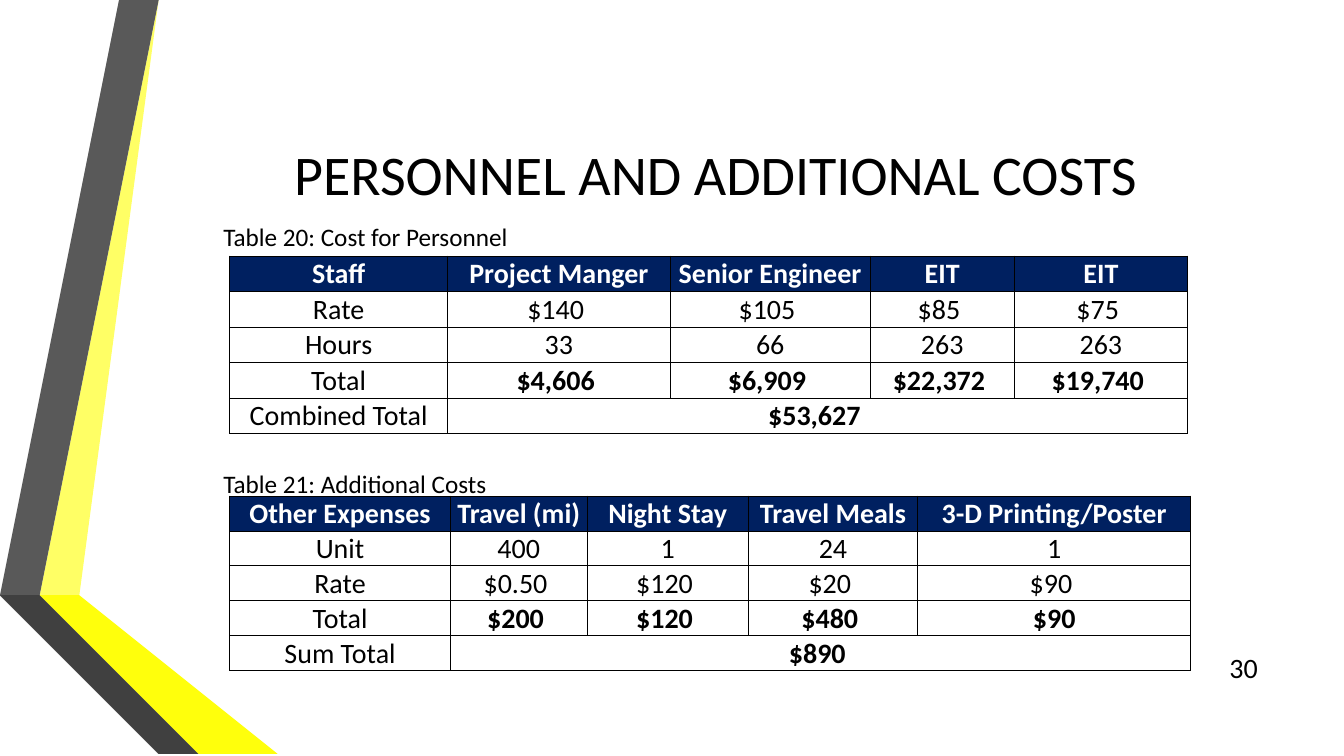
from dataclasses import dataclass

from lxml.etree import SubElement
from pptx import Presentation
from pptx.dml.color import RGBColor
from pptx.enum.text import MSO_ANCHOR, PP_ALIGN
from pptx.oxml.ns import qn
from pptx.util import Cm, Pt

# Content
TITLE = "PERSONNEL AND ADDITIONAL COSTS"
SLIDE_NUMBER = "30"

# The last row of each table holds a label and one value across the other columns
COST_TABLES = [
    {
        "caption": "Table 20: Cost for Personnel",
        "caption_top": 5.44,
        "top": 6.45,
        "column_widths": [5.49, 5.61, 5.04, 3.63, 4.37],
        "rows": [
            ["Staff", "Project Manger", "Senior Engineer", "EIT", "EIT"],
            ["Rate", "$140 ", "$105 ", "$85 ", "$75 "],
            ["Hours", "33", "66", "263", "263"],
            ["Total", "$4,606 ", "$6,909 ", "$22,372 ", "$19,740 "],
            ["Combined Total", "$53,627 "],
        ],
    },
    {
        "caption": "Table 21: Additional Costs",
        "caption_top": 11.68,
        "top": 12.5,
        "column_widths": [5.56, 3.45, 4.06, 4.27, 6.88],
        "rows": [
            ["Other Expenses", "Travel (mi)", "Night Stay", "Travel Meals", "3-D Printing/Poster"],
            ["Unit", "400", "1", "24", "1"],
            ["Rate", "$0.50 ", "$120 ", "$20 ", "$90 "],
            ["Total", "$200 ", "$120 ", "$480 ", "$90"],
            ["Sum Total", "$890 "],
        ],
    },
]

# Folded ribbons: theme colour and corner points in centimetres
RIBBONS = [
    ("yellow_light", [(1.27, 14.68), (1.96, 14.81), (4.39, 0), (3.68, 0)]),
    ("grey_light", [(3.53, 0), (2.82, 0), (0.41, 14.55), (1.12, 14.66)]),
    ("grey_edge", [(0.41, 14.55), (3.68, 19.05), (3.84, 19.05)]),
    ("yellow_edge", [(1.27, 14.71), (5.28, 19.05), (5.44, 19.05)]),
    ("yellow", [(1.27, 14.68), (1.27, 14.71), (5.44, 19.05), (7.19, 19.05), (1.96, 14.81)]),
    ("grey", [(5.12, 19.05), (1.22, 14.81), (1.09, 14.68), (1.12, 14.66),
              (0.41, 14.55), (3.84, 19.05)]),
]

TABLE_LEFT = 5.79
ROW_HEIGHT = 0.87
CAPTION_LEFT, CAPTION_WIDTH, LABEL_HEIGHT = 5.38, 14.88, 1.02


@dataclass(frozen=True)
class Theme:
    font: str = "Calibri"
    title_size: int = 40
    table_size: int = 20
    caption_size: int = 18
    border_width: float = 0.5
    text: str = "000000"
    header_text: str = "FFFFFF"
    header_fill: str = "002060"
    yellow_light: str = "FFFF65"
    yellow: str = "FFFF0C"
    yellow_edge: str = "B2B200"
    grey_light: str = "595959"
    grey: str = "404040"
    grey_edge: str = "262626"


THEME = Theme()


def write_text(text_frame, text, size, align, color=THEME.text, bold=False):
    text_frame.text = text
    paragraph = text_frame.paragraphs[0]
    paragraph.alignment = align
    for run in paragraph.runs:
        run.font.name = THEME.font
        run.font.size = Pt(size)
        run.font.bold = bold
        run.font.color.rgb = RGBColor.from_string(color)


def add_label(slide, box, text, size, align, anchor):
    text_frame = slide.shapes.add_textbox(*map(Cm, box)).text_frame
    text_frame.word_wrap = True
    text_frame.vertical_anchor = anchor
    write_text(text_frame, text, size, align)


def add_ribbon(slide, color_name, points):
    builder = slide.shapes.build_freeform(*points[0], scale=Cm(1))
    builder.add_line_segments(points[1:], close=True)
    shape = builder.convert_to_shape()
    shape.shadow.inherit = False
    shape.fill.solid()
    shape.fill.fore_color.rgb = RGBColor.from_string(getattr(THEME, color_name))
    shape.line.fill.background()


def set_borders(cell):
    properties = cell._tc.get_or_add_tcPr()
    for position, side in enumerate(("lnL", "lnR", "lnT", "lnB")):
        line = SubElement(properties, qn(f"a:{side}"), w=str(Pt(THEME.border_width)))
        SubElement(SubElement(line, qn("a:solidFill")), qn("a:srgbClr"), val=THEME.text)
        properties.insert(position, line)


def format_cell(cell, is_header):
    cell.margin_left = cell.margin_right = cell.margin_top = Cm(0.03)
    cell.margin_bottom = 0
    cell.vertical_anchor = MSO_ANCHOR.BOTTOM
    if is_header:
        cell.fill.solid()
        cell.fill.fore_color.rgb = RGBColor.from_string(THEME.header_fill)
    else:
        cell.fill.background()
    set_borders(cell)


def add_cost_table(slide, top, column_widths, rows):
    row_count, column_count = len(rows), len(column_widths)
    frame = slide.shapes.add_table(
        row_count, column_count, Cm(TABLE_LEFT), Cm(top),
        Cm(sum(column_widths)), Cm(ROW_HEIGHT * row_count))
    table = frame.table
    table.first_row = table.horz_banding = False
    for column, width in zip(table.columns, column_widths):
        column.width = Cm(width)
    for row in table.rows:
        row.height = Cm(ROW_HEIGHT)

    for row_index, values in enumerate(rows):
        is_header = row_index == 0
        is_total = row_index >= row_count - 2
        for column_index in range(column_count):
            format_cell(table.cell(row_index, column_index), is_header)
        for column_index, value in enumerate(values):
            write_text(
                table.cell(row_index, column_index).text_frame, value,
                THEME.table_size, PP_ALIGN.CENTER,
                color=THEME.header_text if is_header else THEME.text,
                bold=is_header or (is_total and column_index > 0))
    table.cell(row_count - 1, 1).merge(table.cell(row_count - 1, column_count - 1))


def main():
    presentation = Presentation()
    presentation.slide_width, presentation.slide_height = Cm(33.87), Cm(19.05)
    slide = presentation.slides.add_slide(presentation.slide_layouts.get_by_name("Title Only"))

    # Ribbons on the left edge
    for color_name, points in RIBBONS:
        add_ribbon(slide, color_name, points)

    # Title
    title = slide.shapes.title
    title.left, title.top, title.width, title.height = map(Cm, (4.11, 1.91, 27.84, 4.88))
    title.text_frame.vertical_anchor = MSO_ANCHOR.MIDDLE
    write_text(title.text_frame, TITLE, THEME.title_size, PP_ALIGN.CENTER)

    # Captioned tables
    for content in COST_TABLES:
        add_cost_table(slide, content["top"], content["column_widths"], content["rows"])
        add_label(slide, (CAPTION_LEFT, content["caption_top"], CAPTION_WIDTH, LABEL_HEIGHT),
                  content["caption"], THEME.caption_size, PP_ALIGN.LEFT, MSO_ANCHOR.TOP)

    # Slide number
    add_label(slide, (30.43, 16.31, 1.52, LABEL_HEIGHT), SLIDE_NUMBER,
              THEME.table_size, PP_ALIGN.RIGHT, MSO_ANCHOR.MIDDLE)

    presentation.save("out.pptx")


if __name__ == "__main__":
    main()
